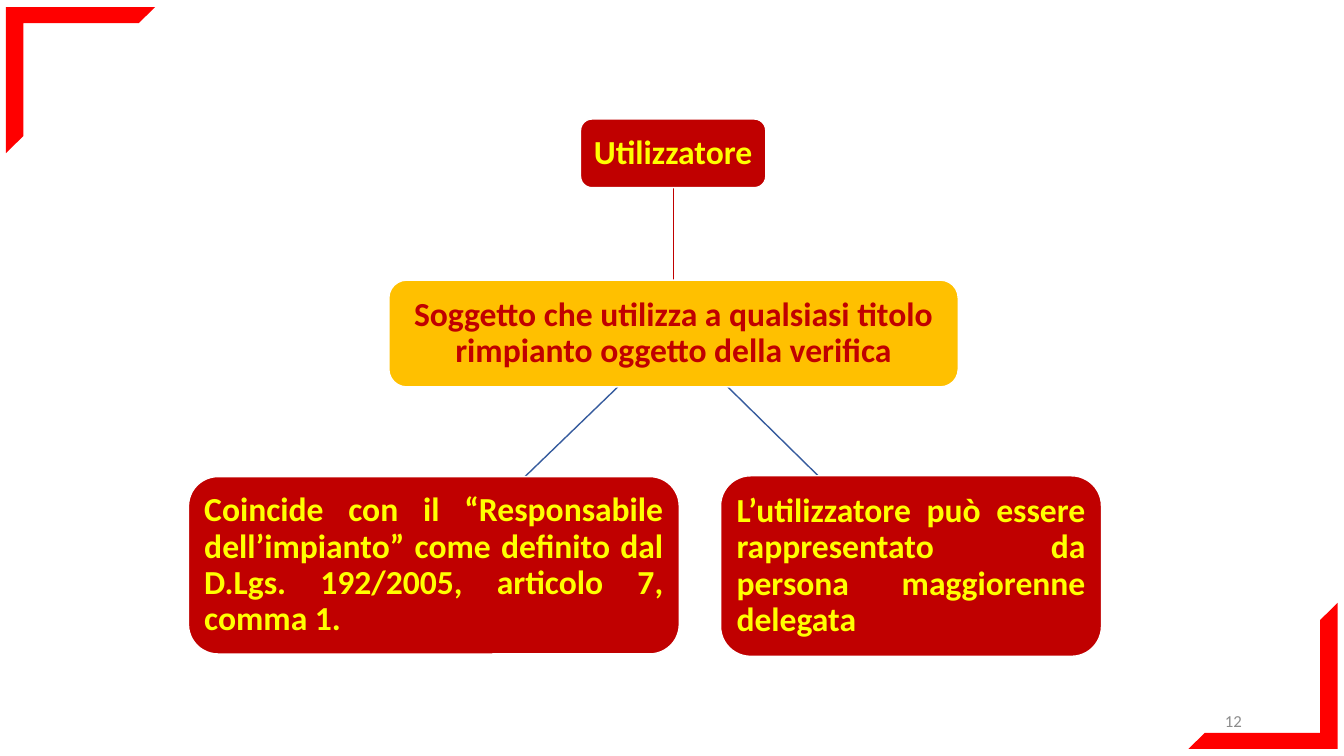
import pptx
import pptx.util
import pptx.dml.color
import pptx.enum.shapes
import pptx.enum.text
import pptx.oxml.ns
import lxml.etree

Cm = pptx.util.Cm
Pt = pptx.util.Pt
RGBColor = pptx.dml.color.RGBColor
SHAPE = pptx.enum.shapes.MSO_SHAPE
CONNECTOR = pptx.enum.shapes.MSO_CONNECTOR
ALIGN = pptx.enum.text.PP_ALIGN
ANCHOR = pptx.enum.text.MSO_ANCHOR

RED = RGBColor(0xFF, 0x00, 0x00)
DARK_RED = RGBColor(0xC0, 0x00, 0x00)
GOLD = RGBColor(0xFF, 0xC0, 0x00)
YELLOW = RGBColor(0xFF, 0xFF, 0x00)
WHITE = RGBColor(0xFF, 0xFF, 0xFF)
BLUE = RGBColor(0x36, 0x5B, 0x9D)
GREY = RGBColor(0x8C, 0x8C, 0x8C)


class Deck:
    font = "Calibri"
    inset = Cm(0.18)

    def __init__(self, prs):
        self.slide = prs.slides.add_slide(prs.slide_layouts[6])

    def add_text(self, tf, text, size, color, align, bold=False):
        tf.word_wrap = True
        tf.vertical_anchor = ANCHOR.MIDDLE
        p = tf.paragraphs[0]
        p.alignment = align
        r = p.add_run()
        r.text = text
        r.font.name = self.font
        r.font.size = Pt(size)
        r.font.bold = bold
        r.font.color.rgb = color
        return p

    def corner(self, x, y, rotation=0):
        sp = self.slide.shapes.add_shape(
            SHAPE.HALF_FRAME, Cm(x), Cm(y), Cm(3.76), Cm(3.68))
        sp.adjustments[0] = 0.11
        sp.adjustments[1] = 0.12
        sp.rotation = rotation
        sp.shadow.inherit = False
        sp.fill.solid()
        sp.fill.fore_color.rgb = RED
        sp.line.fill.background()

    def node(self, x, y, w, h, text, fill, color, align):
        sp = self.slide.shapes.add_shape(
            SHAPE.ROUNDED_RECTANGLE, Cm(x), Cm(y), Cm(w), Cm(h))
        sp.shadow.inherit = False
        sp.fill.solid()
        sp.fill.fore_color.rgb = fill
        sp.line.color.rgb = WHITE
        sp.line.width = Pt(1)
        tf = sp.text_frame
        tf.margin_left = tf.margin_right = self.inset
        tf.margin_top = tf.margin_bottom = self.inset
        p = self.add_text(tf, text, 24, color, align, bold=True)
        p.line_spacing = 0.9

    def link(self, x1, y1, x2, y2, color):
        cxn = self.slide.shapes.add_connector(
            CONNECTOR.STRAIGHT, Cm(x1), Cm(y1), Cm(x2), Cm(y2))
        cxn.line.color.rgb = color
        cxn.line.width = Pt(1)
        spPr = cxn._element.spPr
        lxml.etree.SubElement(spPr, pptx.oxml.ns.qn("a:effectLst"))

    def number(self, x, y, w, h, text):
        sp = self.slide.shapes.add_textbox(Cm(x), Cm(y), Cm(w), Cm(h))
        self.add_text(sp.text_frame, text, 12, GREY, ALIGN.RIGHT)


def main():
    prs = pptx.Presentation()
    prs.slide_width = Cm(33.87)
    prs.slide_height = Cm(19.05)
    s = Deck(prs)

    s.corner(0.15, 0.18)
    s.corner(29.95, 15.19, rotation=180)

    s.link(16.97, 4.72, 16.97, 7.06, DARK_RED)
    s.link(15.57, 9.75, 13.23, 12.01, BLUE)
    s.link(18.34, 9.75, 20.62, 11.99, BLUE)

    s.node(14.63, 3, 4.67, 1.73, "Utilizzatore",
           DARK_RED, YELLOW, ALIGN.CENTER)
    s.node(9.8, 7.06, 14.35, 2.69,
           "Soggetto che utilizza a qualsiasi titolo rimpianto oggetto della verifica",
           GOLD, DARK_RED, ALIGN.CENTER)
    s.node(4.75, 12.01, 12.37, 4.47,
           "Coincide con il “Responsabile dell’impianto” come definito dal "
           "D.Lgs. 192/2005, articolo 7, comma 1.",
           DARK_RED, YELLOW, ALIGN.JUSTIFY)
    s.node(18.16, 11.99, 9.6, 4.55,
           "L’utilizzatore può essere rappresentato da persona maggiorenne delegata",
           DARK_RED, YELLOW, ALIGN.JUSTIFY)

    s.number(23.93, 17.65, 7.62, 1.02, "12")
    prs.save("out.pptx")


if __name__ == "__main__":
    main()
